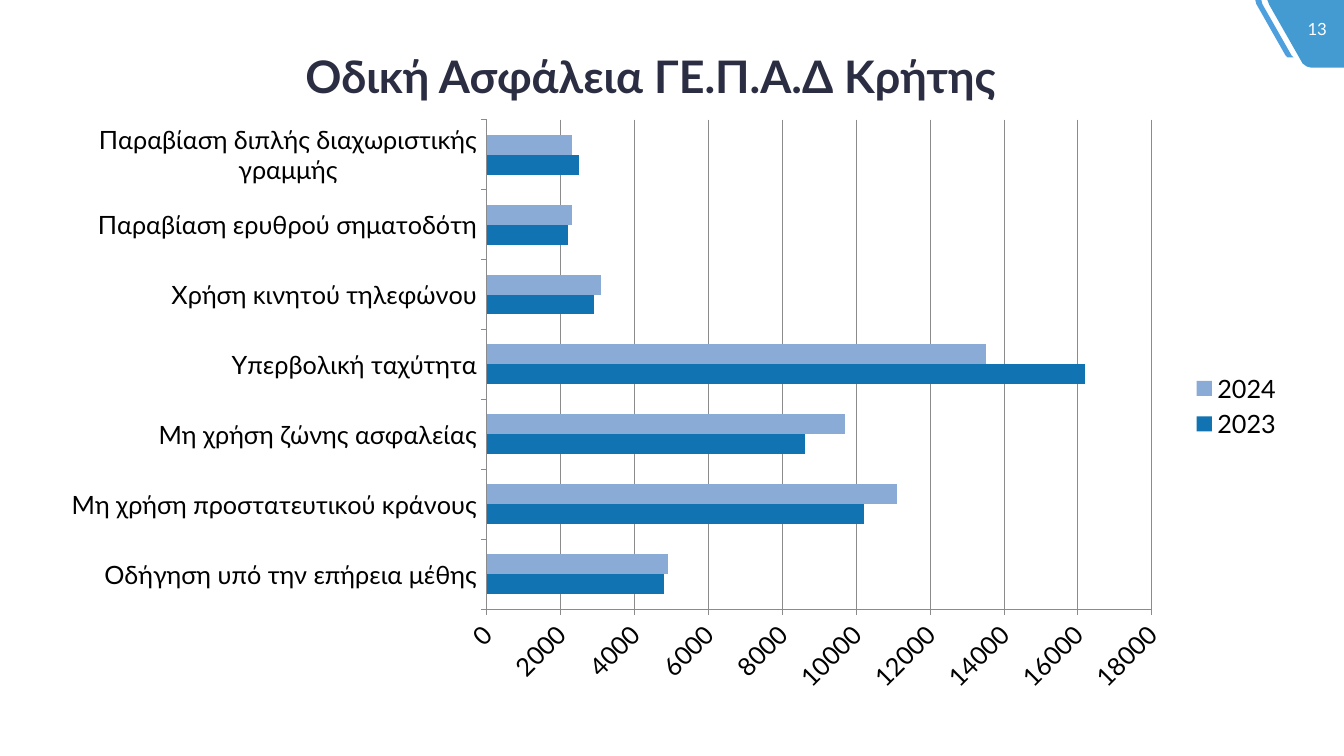
from lxml.etree import SubElement
from pptx import Presentation
from pptx.chart.data import CategoryChartData as ChartData
from pptx.dml.color import RGBColor
from pptx.enum.chart import XL_CHART_TYPE as ChartKind
from pptx.enum.chart import XL_LEGEND_POSITION as LegendPlace
from pptx.enum.chart import XL_TICK_MARK as TickMark
from pptx.enum.text import MSO_ANCHOR as Anchor
from pptx.enum.text import PP_ALIGN as Align
from pptx.oxml.ns import qn
from pptx.util import Inches, Pt

FONT = "Lato"
WHITE = RGBColor(0xFF, 0xFF, 0xFF)
BLACK = RGBColor(0, 0, 0)
INK = RGBColor(0x2B, 0x2D, 0x42)
CORNER_BLUE = RGBColor(0x14, 0x83, 0xC7)
STRIPE_BLUE = RGBColor(0x4D, 0x9F, 0xDD)
GRID_GRAY = RGBColor(0x8B, 0x8B, 0x8B)
SERIES_COLORS = [RGBColor(0x11, 0x73, 0xB2), RGBColor(0x8A, 0xAB, 0xD6)]

CORNER = [(12.57, 0), (13.33, 0), (13.33, 0.67), (13, 0.67), (12.96, 0.66),
          (12.92, 0.63), (12.59, 0.05)]
STRIPE = [(12.45, 0), (12.51, 0), (12.52, 0.04), (12.81, 0.55), (12.83, 0.57),
          (12.77, 0.57), (12.75, 0.55), (12.46, 0.04)]

VIOLATIONS = [
    ("Οδήγηση υπό την επήρεια μέθης", 4800, 4900),
    ("Μη χρήση προστατευτικού κράνους", 10200, 11100),
    ("Μη χρήση ζώνης ασφαλείας", 8600, 9700),
    ("Υπερβολική ταχύτητα", 16200, 13500),
    ("Χρήση κινητού τηλεφώνου", 2900, 3100),
    ("Παραβίαση ερυθρού σηματοδότη", 2200, 2300),
    ("Παραβίαση διπλής διαχωριστικής γραμμής", 2500, 2300),
]


def write(frame, text, size=18, color=BLACK, bold=False, align=Align.LEFT):
    frame.word_wrap = False
    frame.vertical_anchor = Anchor.MIDDLE
    para = frame.paragraphs[0]
    para.alignment = align
    span = para.add_run()
    span.text = text
    span.font.name = FONT
    span.font.size = Pt(size)
    span.font.bold = bold
    span.font.color.rgb = color


class Page:
    def __init__(self, deck):
        self.slide = deck.slides.add_slide(deck.slide_layouts[5])
        self.shapes = self.slide.shapes

    def outline(self, points, color, opacity=100):
        builder = self.shapes.build_freeform(
            Inches(points[0][0]), Inches(points[0][1]))
        builder.add_line_segments(
            [(Inches(x), Inches(y)) for x, y in points[1:]], close=True)
        shape = builder.convert_to_shape()
        shape.shadow.inherit = False
        shape.fill.solid()
        shape.fill.fore_color.rgb = color
        shape.line.fill.background()
        if opacity < 100:
            tint = shape._element.spPr.find(".//" + qn("a:srgbClr"))
            SubElement(tint, qn("a:alpha"), val=str(opacity * 1000))

    def title(self, text, left, top, width, height, **style):
        box = self.shapes.title
        box.left, box.top = Inches(left), Inches(top)
        box.width, box.height = Inches(width), Inches(height)
        write(box.text_frame, text, **style)

    def label(self, text, left, top, width, height, **style):
        box = self.shapes.add_textbox(
            Inches(left), Inches(top), Inches(width), Inches(height))
        write(box.text_frame, text, **style)

    def bar_chart(self, rows, names, left, top, width, height):
        data = ChartData()
        data.categories = [row[0] for row in rows]
        for column, name in enumerate(names, start=1):
            data.add_series(name, [row[column] for row in rows])
        chart = self.shapes.add_chart(
            ChartKind.BAR_CLUSTERED, Inches(left), Inches(top),
            Inches(width), Inches(height), data).chart
        chart.has_title = False
        chart.font.name = FONT
        chart.font.size = Pt(18)
        chart.font.color.rgb = BLACK
        chart.has_legend = True
        chart.legend.position = LegendPlace.RIGHT
        chart.legend.include_in_layout = False

        plot = chart.plots[0]
        plot.vary_by_categories = False
        plot.gap_width = 150
        plot.overlap = 0
        for series, color in zip(plot.series, SERIES_COLORS):
            series.format.fill.solid()
            series.format.fill.fore_color.rgb = color

        values = chart.value_axis
        values.minimum_scale = 0
        values.maximum_scale = 18000
        values.major_unit = 2000
        values.has_major_gridlines = True
        values.major_gridlines.format.line.color.rgb = GRID_GRAY
        for axis in (chart.category_axis, values):
            axis.major_tick_mark = TickMark.OUTSIDE
            axis.format.line.color.rgb = GRID_GRAY
            axis.tick_labels.font.size = Pt(18)
        turned = values._element.find(qn("c:txPr")).find(qn("a:bodyPr"))
        turned.set("rot", "-2700000")
        self.place_plot(chart, x=0.353, y=0.02, w=0.534, h=0.82)

    def place_plot(self, chart, **fractions):
        area = chart._chartSpace.find(".//" + qn("c:plotArea"))
        layout = area.find(qn("c:layout"))
        if layout is None:
            layout = SubElement(area, qn("c:layout"))
            area.insert(0, layout)
        manual = SubElement(layout, qn("c:manualLayout"))
        settings = {"layoutTarget": "inner", "xMode": "edge", "yMode": "edge"}
        for tag, value in {**settings, **fractions}.items():
            SubElement(manual, qn("c:" + tag), val=str(value))


def main():
    deck = Presentation()
    deck.slide_width = Inches(13.33)
    deck.slide_height = Inches(7.5)
    page = Page(deck)
    page.outline(CORNER, CORNER_BLUE, opacity=80)
    page.outline(STRIPE, STRIPE_BLUE)
    page.label("13", 12.86, 0.14, 0.41, 0.3, size=12, color=WHITE,
               align=Align.CENTER)
    page.title("Οδική Ασφάλεια ΓΕ.Π.Α.Δ Κρήτης", 2.93, 0.43, 7.43, 0.64,
               size=32, color=INK, bold=True)
    page.bar_chart(VIOLATIONS, ["2023", "2024"], 0.47, 1.07, 12.35, 5.92)
    deck.save("out.pptx")


if __name__ == "__main__":
    main()
